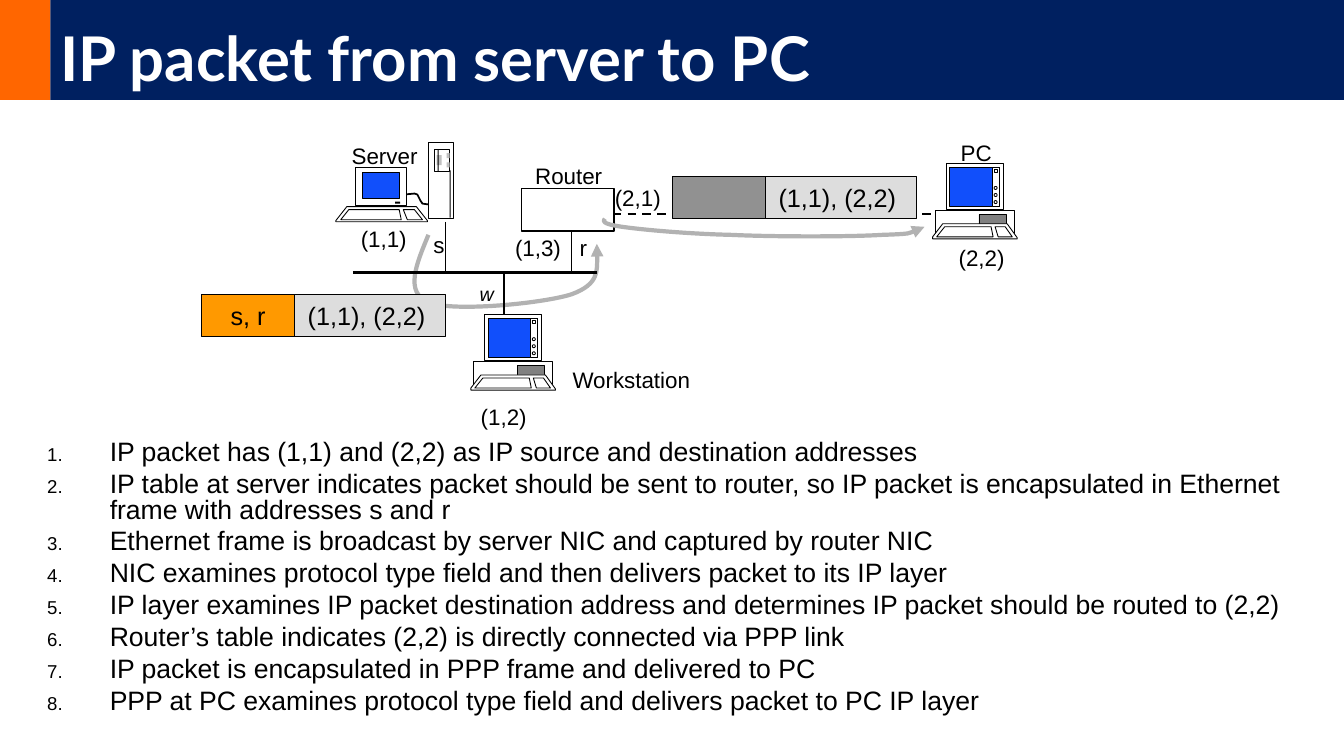
from collections import namedtuple
from dataclasses import dataclass

from lxml import etree
from pptx import Presentation
from pptx import util as u
from pptx.dml.color import RGBColor
from pptx.enum import dml, shapes, text
from pptx.oxml import ns

PX = 9144  # EMU per px, 100 px to the inch
Box = namedtuple("Box", "left top width height")
RECT = shapes.MSO_SHAPE.RECTANGLE
OVAL = shapes.MSO_SHAPE.OVAL


@dataclass(frozen=True)
class Theme:
    font: str = "Arial"
    title_font: str = "Lato"
    black: str = "000000"
    white: str = "FFFFFF"
    navy: str = "002060"
    accent: str = "FF6600"
    header: str = "FF9900"
    ppp_header: str = "919191"
    payload: str = "DDDDDD"
    route: str = "B2B2B2"
    screen: str = "114FFB"
    drive: str = "808080"
    vent: str = "C0C0C0"
    title_size: float = 44
    body_size: float = 19
    packet_size: float = 18
    label_size: float = 16
    small_size: float = 14
    hairline: float = 0.63


THEME = Theme()


def px(*lengths):
    return [u.Emu(length * PX) for length in lengths]


def paint(shape, fill=None, line=None, width=THEME.hairline):
    shape.shadow.inherit = False
    if fill:
        shape.fill.solid()
        shape.fill.fore_color.rgb = RGBColor.from_string(fill)
    else:
        shape.fill.background()
    if line:
        shape.line.color.rgb = RGBColor.from_string(line)
        shape.line.width = u.Pt(width)
    else:
        shape.line.fill.background()
    return shape


def add_block(parent, box, fill, line=THEME.black, width=THEME.hairline, kind=RECT):
    return paint(parent.shapes.add_shape(kind, *px(*box)), fill, line, width)


def add_outline(parent, origin, points, fill=None, line=THEME.black, width=THEME.hairline):
    """Draw a polygon, closed when it has a fill, with points relative to origin."""
    start, *rest = [(origin.left + x, origin.top + y) for x, y in points]
    builder = parent.shapes.build_freeform(*start, scale=PX)
    builder.add_line_segments(rest, close=bool(fill))
    return paint(builder.convert_to_shape(), fill, line, width)


def add_route(page, points):
    """Draw a cubic curve with an arrowhead; points are a start, then triples."""
    route = add_outline(page, Box(0, 0, 0, 0), points, line=THEME.route, width=3)
    steps = route._element.xpath(".//a:lnTo")
    for first in range(0, len(steps), 3):
        curve = etree.Element(ns.qn("a:cubicBezTo"))
        steps[first].addprevious(curve)
        for step in steps[first:first + 3]:
            curve.append(step[0])
            step.getparent().remove(step)
    etree.SubElement(route.line._get_or_add_ln(), ns.qn("a:tailEnd"), type="triangle")


def add_wire(page, start, end, width=1, dashed=False):
    wire = page.shapes.add_connector(shapes.MSO_CONNECTOR.STRAIGHT, *px(*start, *end))
    wire.line.color.rgb = RGBColor.from_string(THEME.black)
    wire.line.width = u.Pt(width)
    if dashed:
        wire.line.dash_style = dml.MSO_LINE.DASH
    etree.SubElement(wire._element.spPr, ns.qn("a:effectLst"))


def add_run(para, words, size, color=THEME.black, font=THEME.font):
    span = para.add_run()
    span.text = words
    span.font.size = u.Pt(size)
    span.font.name = font
    span.font.color.rgb = RGBColor.from_string(color)
    return span


def add_label(page, words, box, size=THEME.label_size, italic=None):
    frame = page.shapes.add_textbox(*px(*box)).text_frame
    frame.word_wrap = False
    add_run(frame.paragraphs[0], words, size).font.italic = italic


def draw_title(page, box):
    stripe = 50
    add_block(page, Box(box.left, box.top, stripe, box.height), THEME.accent, None)
    banner = Box(box.left + stripe, box.top, box.width - stripe, box.height)
    frame = add_block(page, banner, THEME.navy, None).text_frame
    frame.word_wrap = True
    frame.vertical_anchor = text.MSO_ANCHOR.BOTTOM
    para = frame.paragraphs[0]
    para.alignment = text.PP_ALIGN.LEFT
    para.line_spacing = 0.9
    span = add_run(para, "IP packet from server to PC", THEME.title_size, THEME.white, THEME.title_font)
    span.font.bold = True


def draw_parts(group, box, parts):
    for x, y, width, height, fill, line in parts:
        add_block(group, Box(box.left + x, box.top + y, width, height), fill, line)


def draw_desktop(page, box):
    group = page.shapes.add_group_shape()
    draw_parts(group, box, [(3, 47, 78, 24, THEME.white, THEME.black),
                            (46, 51, 27, 11, THEME.drive, THEME.black)])
    for points in ([(10, 60), (74, 60), (84, 74), (84, 75), (0, 75), (0, 73)],
                   [(12, 63), (58, 63), (60, 73), (4, 73)],
                   [(62, 63), (72, 63), (79, 73), (65, 73)]):
        add_outline(group, box, points, THEME.white)
    draw_parts(group, box, [(14, 0, 56, 46, THEME.white, THEME.black),
                            (17, 4, 49, 39, THEME.screen, THEME.black),
                            (59, 4, 7, 39, THEME.white, THEME.black),
                            (61, 6, 3, 3, THEME.white, THEME.black)])
    for knob in range(3):
        add_block(group, Box(box.left + 61, box.top + 23 + 7 * knob, 3, 3), THEME.white, kind=OVAL)


def draw_server(page, box):
    group = page.shapes.add_group_shape()
    cable = [(68, 52), (78, 51), (81, 52), (84, 58), (86, 61), (93, 62)]
    add_outline(group, box, cable, width=1.25)
    for points in ([(11, 64), (80, 64), (91, 78), (91, 79), (0, 79), (0, 78)],
                   [(13, 67), (63, 67), (65, 77), (5, 77)],
                   [(67, 67), (78, 67), (86, 77), (71, 77)]):
        add_outline(group, box, points, THEME.white)
    draw_parts(group, box, [(20, 25, 50, 38, THEME.white, THEME.black),
                            (27, 30, 36, 26, THEME.screen, THEME.black),
                            (59, 59, 5, 2, THEME.black, None),
                            (92, 0, 25, 76, THEME.white, THEME.black),
                            (98, 7, 15, 22, THEME.white, THEME.black),
                            (113, 28, 1, 47, THEME.black, None),
                            (100, 13, 5, 10, THEME.vent, None),
                            (101, 7, 1, 22, THEME.black, None),
                            (110, 11, 3, 5, THEME.vent, None),
                            (110, 20, 3, 5, THEME.vent, None)])


def draw_packet(page, box, header, fill):
    group = page.shapes.add_group_shape()
    split = 92
    payload = Box(box.left + split, box.top, box.width - split, box.height)
    for part, words, color in ((payload, "(1,1), (2,2) ", THEME.payload),
                               (Box(box.left, box.top, split, box.height), header, fill)):
        frame = add_block(group, part, color, width=0.75).text_frame
        if words:
            frame.word_wrap = False
            frame.vertical_anchor = text.MSO_ANCHOR.MIDDLE
            frame.paragraphs[0].alignment = text.PP_ALIGN.CENTER
            add_run(frame.paragraphs[0], words, THEME.packet_size)


def draw_network(page, box):
    """Draw both networks, the machines on them and the packet's two hops."""
    def at(x, y, width=0, height=0):
        return Box(box.left + x, box.top + y, width, height)

    def spot(x, y):
        return at(x, y)[:2]

    add_route(page, [spot(*p) for p in (
        (225, 100), (213, 129), (201, 157), (225, 167),
        (249, 177), (339, 168), (367, 159), (394, 149), (393, 129), (392, 109))])
    add_wire(page, spot(150, 137), spot(392, 137), 2.25)
    draw_desktop(page, at(267, 179, 84, 75))
    draw_server(page, at(133, 8, 117, 79))
    add_wire(page, spot(242, 87), spot(242, 137))
    add_wire(page, spot(300, 137), spot(300, 179))
    add_block(page, at(317, 54, 92, 42), THEME.white, width=1)
    add_wire(page, spot(367, 96), spot(367, 137))
    draw_desktop(page, at(725, 29, 84, 75))
    add_wire(page, spot(408, 79), spot(725, 79), 1.5, dashed=True)
    for words, x, y, width in (
            ("(1,1)", 148, 85, 66), ("s", 220, 91, 31), ("(1,2)", 267, 262, 66),
            ("(2,1)", 400, 45, 66), ("(1,3)", 301, 94, 66), ("r", 365, 94, 28),
            ("(2,2)", 741, 104, 66), ("PC", 743, 0, 51), ("Server", 139, 3, 86),
            ("Router", 321, 23, 87), ("Workstation", 358, 225, 138)):
        add_label(page, words, at(x, y, width, 37))
    add_label(page, "w", at(266, 142, 34, 33), THEME.small_size, italic=True)
    draw_packet(page, at(0, 159, 242, 42), "s, r", THEME.header)
    draw_packet(page, at(467, 42, 242, 42), "", THEME.ppp_header)
    add_route(page, [spot(*p) for p in (
        (400, 84), (398, 86), (396, 89), (417, 92), (438, 95), (482, 99), (525, 100),
        (568, 102), (643, 102), (675, 100), (707, 99), (712, 95), (717, 92))])


def draw_steps(page, box, steps):
    frame = page.shapes.add_textbox(*px(*box)).text_frame
    frame.word_wrap = True
    for index, step in enumerate(steps):
        para = frame.add_paragraph() if index else frame.paragraphs[0]
        para.line_spacing = 0.8
        para.space_before = u.Pt(4.5)
        props = para._p.get_or_add_pPr()
        props.set("marL", str(62 * PX))
        props.set("indent", str(-62 * PX))
        etree.SubElement(props, ns.qn("a:buSzPct"), val="70000")
        etree.SubElement(props, ns.qn("a:buFont"), typeface=THEME.font)
        etree.SubElement(props, ns.qn("a:buAutoNum"), type="arabicPeriod")
        add_run(para, step, THEME.body_size)


def main():
    deck = Presentation()
    deck.slide_width, deck.slide_height = px(1333, 750)
    page = deck.slides.add_slide(deck.slide_layouts[6])
    draw_title(page, Box(0, 0, 1333, 99))
    draw_network(page, Box(200, 133, 809, 299))
    draw_steps(page, Box(37, 433, 1258, 250), [
        "IP packet has (1,1) and (2,2) as IP source and destination addresses",
        "IP table at server indicates packet should be sent to router, so IP packet "
        "is encapsulated in Ethernet frame with addresses s and r",
        "Ethernet frame is broadcast by server NIC and captured by router NIC",
        "NIC examines protocol type field and then delivers packet to its IP layer",
        "IP layer examines IP packet destination address and determines IP packet should be routed to (2,2)",
        "Router’s table indicates (2,2) is directly connected via PPP link",
        "IP packet is encapsulated in PPP frame and delivered to PC",
        "PPP at PC examines protocol type field and delivers packet to PC IP layer",
    ])
    deck.save("out.pptx")


if __name__ == "__main__":
    main()
